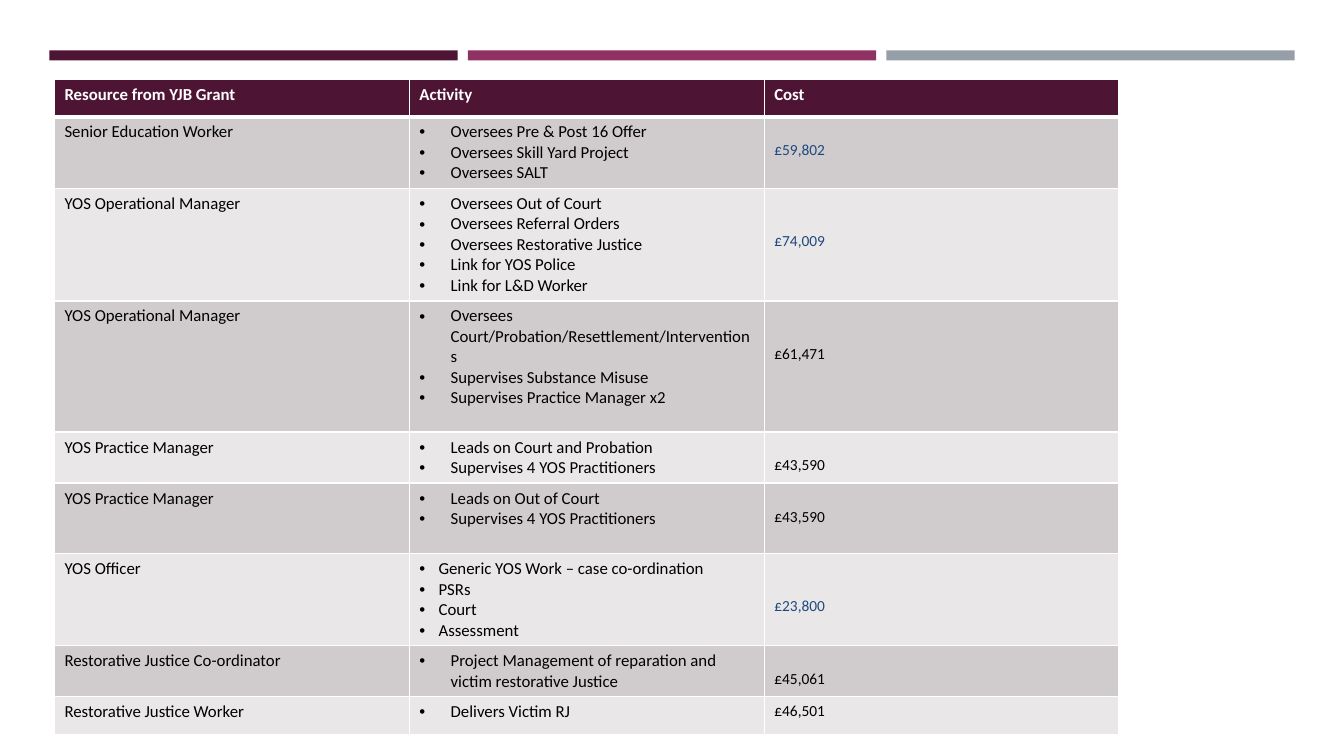
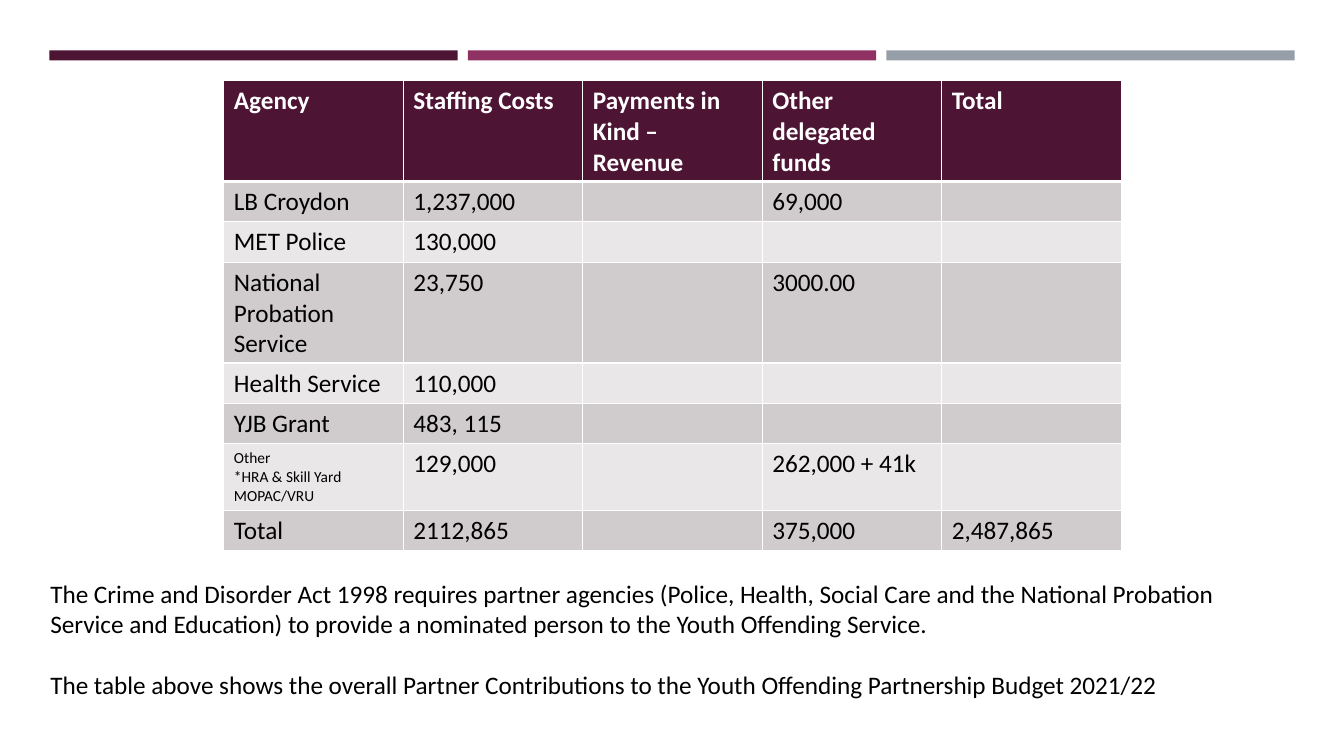
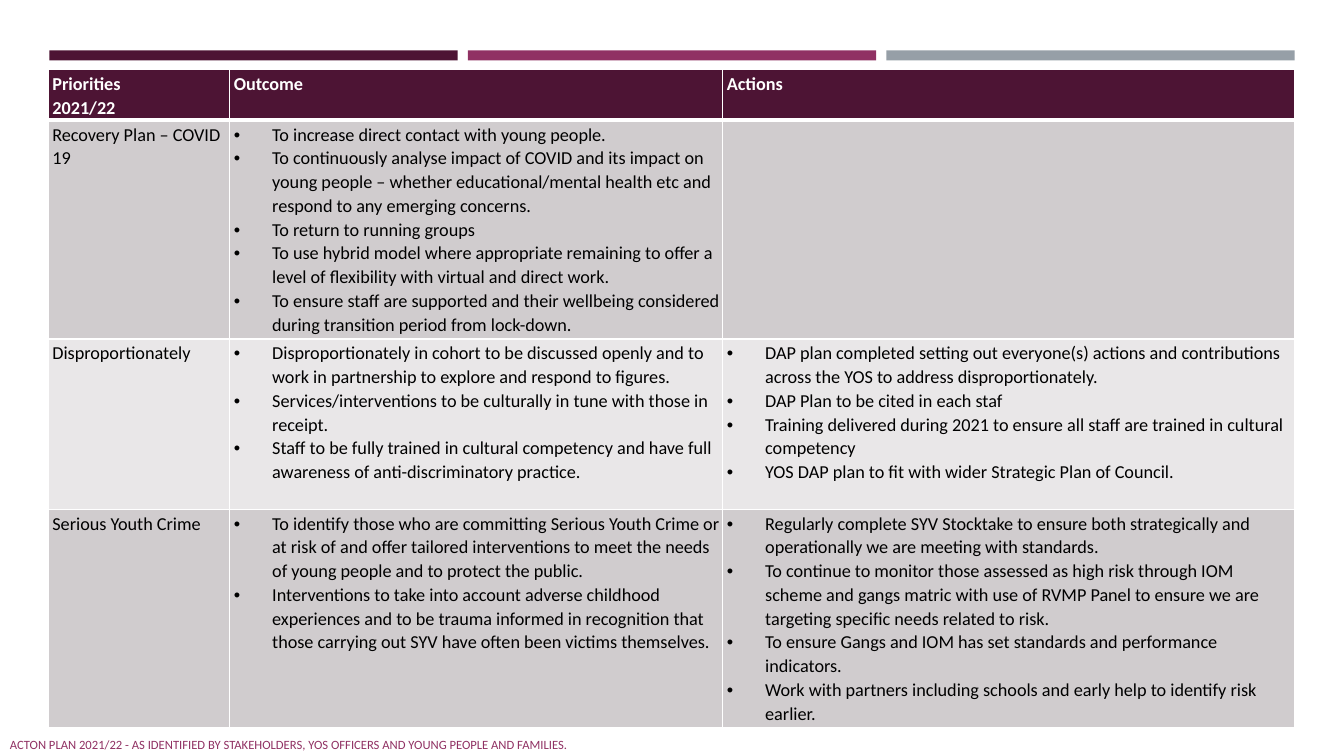
from lxml import etree
from pptx import Presentation
from pptx.dml.color import RGBColor
from pptx.enum.shapes import MSO_SHAPE
from pptx.enum.text import MSO_ANCHOR
from pptx.oxml.ns import qn
from pptx.util import Inches, Pt

RECTANGLE = MSO_SHAPE.RECTANGLE
MIDDLE = MSO_ANCHOR.MIDDLE

FONT = "Calibri"
COLORS = {
    "plum": "4D1434",
    "magenta": "903163",
    "grey": "969FA7",
    "row_dark": "D0CCCE",
    "row_light": "E9E7E8",
    "white": "FFFFFF",
    "black": "000000",
    "blue": "1F497D",
}
COST_SIZE = 11
COST_LINE = 0.19  # height of one line of cost text, in inches


def rgb(name):
    return RGBColor.from_string(COLORS[name])


def write_text(frame, text, size=18, color="black", bold=False,
               indent=0, line_spacing=None, gap=0):
    """Fill a frame, one paragraph per line; a non-zero indent gives bullets."""
    for i, line in enumerate(text.split("\n")):
        paragraph = frame.paragraphs[0] if i == 0 else frame.add_paragraph()
        if line_spacing:
            paragraph.line_spacing = line_spacing
        if i and gap:
            paragraph.space_before = Pt(gap)
        if indent:
            add_bullet(paragraph, indent)
        run = paragraph.add_run()
        run.text = line
        run.font.name = FONT
        run.font.size = Pt(size)
        run.font.bold = bold
        run.font.color.rgb = rgb(color)


def add_bullet(paragraph, indent):
    properties = paragraph._p.get_or_add_pPr()
    properties.set("marL", str(Inches(indent)))
    properties.set("indent", str(-Inches(indent)))
    etree.SubElement(properties, qn("a:buFont")).set("typeface", "Arial")
    etree.SubElement(properties, qn("a:buChar")).set("char", "•")


def add_text_box(slide, left, top, width, height, text, anchor=None, **text_format):
    box = slide.shapes.add_textbox(
        Inches(left), Inches(top), Inches(width), Inches(height))
    box.text_frame.word_wrap = True
    if anchor is not None:
        box.text_frame.vertical_anchor = anchor
    write_text(box.text_frame, text, **text_format)


def bullets(*lines, indent=0.31):
    return {"text": "\n".join(lines), "indent": indent}


def cost(amount, lines_down, color="black"):
    """A cost that starts the given number of lines below the cell's top."""
    return {"text": amount, "size": COST_SIZE, "color": color,
            "top": 0.05 + lines_down * COST_LINE}


def set_borders(cell, top=1, bottom=1):
    properties = cell._tc.get_or_add_tcPr()
    for side, points in (("L", 1), ("R", 1), ("T", top), ("B", bottom)):
        line = etree.SubElement(properties, qn(f"a:ln{side}"), w=str(Pt(points)))
        fill = etree.SubElement(line, qn("a:solidFill"))
        etree.SubElement(fill, qn("a:srgbClr"), val=COLORS["white"])


def add_grid(slide, left, top, columns, heights, rows, margins=None, **text_format):
    """Table with a plum header and banded rows; a cell is text or a format dict."""
    table = slide.shapes.add_table(
        len(rows), len(columns), Inches(left), Inches(top),
        Inches(sum(columns)), Inches(sum(heights))).table
    for column, width in zip(table.columns, columns):
        column.width = Inches(width)
    for r, (row, height) in enumerate(zip(rows, heights)):
        table.rows[r].height = Inches(height)
        header = r == 0
        band = "plum" if header else ("row_light", "row_dark")[r % 2]
        for c, content in enumerate(row):
            cell = table.cell(r, c)
            set_borders(cell, top=3 if r == 1 else 1, bottom=3 if header else 1)
            cell.fill.solid()
            cell.fill.fore_color.rgb = rgb(band)
            if margins:
                cell.margin_left = cell.margin_right = Inches(margins[0])
                cell.margin_top = cell.margin_bottom = Inches(margins[1])
            if not content:
                continue
            own = {"text": content} if isinstance(content, str) else dict(content)
            if "top" in own:
                cell.margin_top = Inches(own.pop("top"))
            base = {"color": "white" if header else "black", "bold": header}
            write_text(cell.text_frame, **{**text_format, **base, **own})


def add_bands(slide, layout):
    """Draw the three bands and move them to the layout all slides share."""
    width, gap = 4.05, 0.1
    for i, color in enumerate(("plum", "magenta", "grey")):
        band = slide.shapes.add_shape(
            RECTANGLE, Inches(0.49 + i * (width + gap)), Inches(0.5),
            Inches(width), Inches(0.1))
        band.shadow.inherit = False
        band.fill.solid()
        band.fill.fore_color.rgb = rgb(color)
        band.line.fill.background()
        layout.shapes.element.append(band.element)


def build_grant_slide(slide):
    rows = [
        ("Resource from YJB Grant", "Activity", "Cost"),
        ("Senior Education Worker",
         bullets("Oversees Pre & Post 16 Offer", "Oversees Skill Yard Project",
                 "Oversees SALT"),
         cost("£59,802", 1, "blue")),
        ("YOS Operational Manager",
         bullets("Oversees Out of Court", "Oversees Referral Orders",
                 "Oversees Restorative Justice", "Link for YOS Police",
                 "Link for L&D Worker"),
         cost("£74,009", 2, "blue")),
        ("YOS Operational Manager",
         bullets("Oversees Court/Probation/Resettlement/Interventions",
                 "Supervises Substance Misuse", "Supervises Practice Manager x2"),
         cost("£61,471", 2)),
        ("YOS Practice Manager",
         bullets("Leads on Court and Probation", "Supervises 4 YOS Practitioners"),
         cost("£43,590", 1)),
        ("YOS Practice Manager",
         bullets("Leads on Out of Court", "Supervises 4 YOS Practitioners"),
         cost("£43,590", 1)),
        ("YOS Officer",
         bullets("Generic YOS Work – case co-ordination", "PSRs", "Court",
                 "Assessment", indent=0.19),
         cost("£23,800", 2, "blue")),
        ("Restorative Justice Co-ordinator",
         bullets("Project Management of reparation and victim restorative Justice"),
         cost("£45,061", 1)),
        ("Restorative Justice Worker", bullets("Delivers Victim RJ"),
         cost("£46,501", 0)),
    ]
    heights = [0.37, 0.69, 1.1, 1.3, 0.5, 0.7, 0.9, 0.5, 0.38]
    add_grid(slide, 0.54, 0.79, [3.52] * 3, heights, rows, size=12)


def build_contributions_slide(slide):
    rows = [
        ("Agency", "Staffing Costs", "Payments in Kind – Revenue",
         "Other delegated funds", "Total"),
        ("LB Croydon", "1,237,000", "", "69,000", ""),
        ("MET Police", "130,000", "", "", ""),
        ("National Probation Service", "23,750", "", "3000.00", ""),
        ("Health Service", "110,000", "", "", ""),
        ("YJB Grant", "483, 115", "", "", ""),
        ({"text": "Other\n*HRA & Skill Yard MOPAC/VRU", "size": 11},
         "129,000", "", "262,000 + 41k", ""),
        ("Total", "2112,865", "", "375,000", "2,487,865"),
    ]
    heights = [0.98, 0.4, 0.4, 1, 0.4, 0.4, 0.66, 0.4]
    add_text_box(
        slide, 0.4, 5.69, 12.48, 1.62,
        "The Crime and Disorder Act 1998 requires partner agencies (Police, Health, "
        "Social Care and the National Probation Service and Education) to provide a "
        "nominated person to the Youth Offending Service.\n"
        "The table above shows the overall Partner Contributions to the Youth "
        "Offending Partnership Budget 2021/22",
        gap=21.6)
    add_grid(slide, 2.22, 0.8, [1.78] * 5, heights, rows, size=18)


def build_priorities_slide(slide):
    def goals(*lines):
        return bullets(*lines, indent=0.38)

    rows = [
        ("Priorities\n2021/22", "Outcome", "Actions"),
        ("Recovery Plan – COVID 19",
         goals("To increase direct contact with young people.",
               "To continuously analyse impact of COVID and its impact on young "
               "people – whether educational/mental health etc and respond to any "
               "emerging concerns.",
               "To return to running groups",
               "To use hybrid model where appropriate remaining to offer a level of "
               "flexibility with virtual and direct work.",
               "To ensure staff are supported and their wellbeing considered during "
               "transition period from lock-down."),
         ""),
        ("Disproportionately",
         goals("Disproportionately in cohort to be discussed openly and to work in "
               "partnership to explore and respond to figures.",
               "Services/interventions to be culturally in tune with those in receipt.",
               "Staff to be fully trained in cultural competency and have full "
               "awareness of anti-discriminatory practice."),
         goals("DAP plan completed setting out everyone(s) actions and contributions "
               "across the YOS to address disproportionately.",
               "DAP Plan to be cited in each staf",
               "Training delivered during 2021 to ensure all staff are trained in "
               "cultural competency",
               "YOS DAP plan to fit with wider Strategic Plan of Council.")),
        ("Serious Youth Crime",
         goals("To identify those who are committing Serious Youth Crime or at risk "
               "of and offer tailored interventions to meet the needs of young people "
               "and to protect the public.",
               "Interventions to take into account adverse childhood experiences and "
               "to be trauma informed in recognition that those carrying out SYV have "
               "often been victims themselves."),
         goals("Regularly complete SYV Stocktake to ensure both strategically and "
               "operationally we are meeting with standards.",
               "To continue to monitor those assessed as high risk through IOM scheme "
               "and gangs matric with use of RVMP Panel to ensure we are targeting "
               "specific needs related to risk.",
               "To ensure Gangs and IOM has set standards and performance indicators.",
               "Work with partners including schools and early help to identify risk "
               "earlier.")),
    ]
    add_text_box(
        slide, 0, 7.27, 6.5, 0.23,
        "ACTON PLAN 2021/22 - AS IDENTIFIED BY STAKEHOLDERS, YOS OFFICERS AND YOUNG "
        "PEOPLE AND FAMILIES.",
        anchor=MIDDLE, size=9, color="magenta")
    add_grid(slide, 0.48, 0.69, [1.8, 4.89, 5.67], [0.5, 2.17, 1.69, 2.17], rows,
             margins=(0.04, 0.02), size=13, line_spacing=1.07)


def main():
    deck = Presentation()
    deck.slide_width, deck.slide_height = Inches(13.33), Inches(7.5)
    layout = deck.slide_layouts.get_by_name("Blank")
    builders = (build_grant_slide, build_contributions_slide, build_priorities_slide)
    slides = [deck.slides.add_slide(layout) for _ in builders]
    add_bands(slides[0], layout)
    for build, slide in zip(builders, slides):
        build(slide)
    deck.save("out.pptx")


if __name__ == "__main__":
    main()
